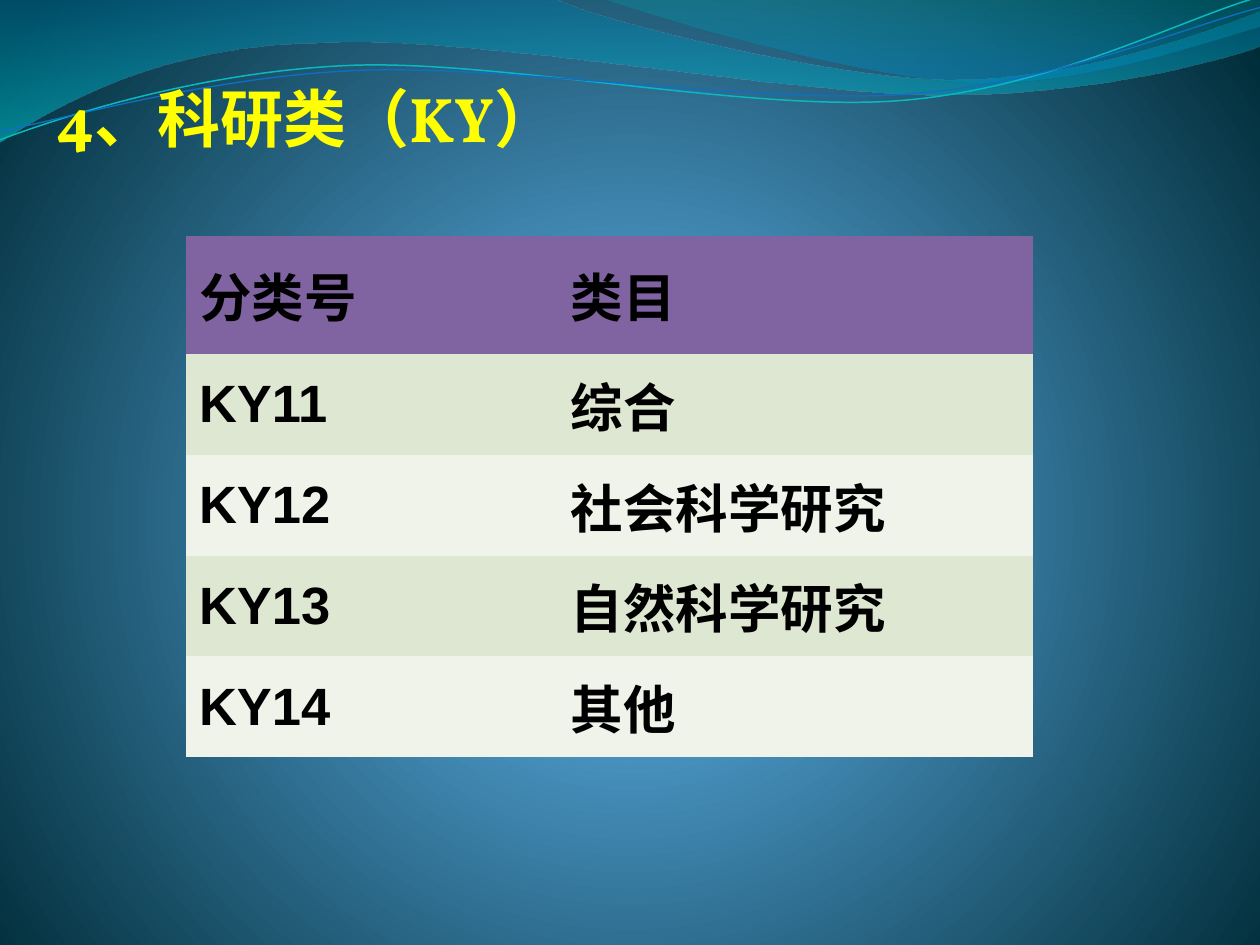
from dataclasses import dataclass
from typing import Optional

from pptx import Presentation
from pptx.dml.color import RGBColor
from pptx.enum.text import MSO_ANCHOR
from pptx.oxml import parse_xml
from pptx.oxml.ns import nsdecls, qn
from pptx.util import Inches, Pt

Stop = tuple[int, str, int]
LINEAR_DOWN = '<a:lin ang="5400000" scaled="0"/>'
RADIAL = ('<a:path path="circle"><a:fillToRect l="10000" t="110000" '
          'r="10000" b="100000"/></a:path>')


@dataclass(frozen=True)
class Wave:
    """A run of segments: two numbers make a line, six a Bezier curve."""
    start: tuple[float, float]
    segments: tuple[tuple[float, ...], ...]
    stops: tuple[Stop, ...] = ()
    line_color: Optional[str] = None
    line_width: float = 0


WAVES = (
    Wave((0, -0.01), (
        (4.4, -0.01),
        (4.76, 0.17, 6.64, 0.63, 7.58, 0.63),
        (8.53, 0.63, 9.58, 0.26, 10, 0.09),
        (10.01, 0.36),
        (9.83, 0.44, 8.7, 0.76, 7.46, 0.75),
        (6.22, 0.75, 3.82, 0.28, 2.57, 0.34),
        (1.29, 0.35, 0.46, 0.83, -0.01, 1.13),
    ), stops=((0, "0074A1", 45), (100, "00C6CF", 55))),
    Wave((4.79, -0.01), (
        (5.09, 0.11, 6.82, 0.62, 7.69, 0.65),
        (8.56, 0.69, 9.61, 0.32, 10, 0.21),
        (10, 0),
    ), stops=((0, "00A1A9", 30), (80, "008BBF", 45))),
    Wave((0, 1.11), (
        (0.48, 0.93, 1.58, 0.57, 2.77, 0.52),
        (3.95, 0.47, 5.93, 0.89, 7.13, 0.8),
        (8.33, 0.71, 9.38, 0.15, 9.98, -0.02),
    ), line_color="0AB8BF", line_width=0.85),
    Wave((0, 1.04), (
        (0.47, 0.96, 1.64, 0.61, 2.83, 0.56),
        (4.03, 0.51, 5.97, 0.83, 7.17, 0.75),
        (8.36, 0.67, 9.41, 0.21, 10, 0.06),
    ), line_color="0F6FC6", line_width=0.75),
)
BACKGROUND_STOPS = ((0, "4AA0D6", 100), (25, "4C98C7", 100), (100, "002C38", 100))
ROWS = (("分类号", "类目"), ("KY11", "综合"), ("KY12", "社会科学研究"),
        ("KY13", "自然科学研究"), ("KY14", "其他"))
COLUMN_WIDTHS = (2.95, 3.77)
HEADER_HEIGHT, ROW_HEIGHT = 0.94, 0.8
HEADER_COLOR, BAND_COLORS = "8064A2", ("EFF3EA", "DEE7D1")
NO_STYLE_ID = "{2D5ABB26-0587-4C30-8999-92F81FD0307C}"


def rgb(color: str) -> RGBColor:
    """Turn a hex string into a colour."""
    return RGBColor.from_string(color)


def set_gradient(fill, element, stops: tuple[Stop, ...], direction: str) -> None:
    """Give a fill a gradient of (position, colour, opacity) stops."""
    fill.gradient()
    gradient = next(element.iter(qn("a:gradFill")))
    stop_xml = "".join(
        f'<a:gs pos="{position * 1000}"><a:srgbClr val="{color}">'
        f'<a:alpha val="{opacity * 1000}"/></a:srgbClr></a:gs>'
        for position, color, opacity in stops)
    gradient.getparent().replace(gradient, parse_xml(
        f'<a:gradFill {nsdecls("a")} rotWithShape="1">'
        f'<a:gsLst>{stop_xml}</a:gsLst>{direction}</a:gradFill>'))


def bend_segments(shape, wave: Wave) -> None:
    """Merge each three control points of a curve into one Bezier segment."""
    lines = iter(list(shape._element.iter(qn("a:lnTo"))))
    for segment in wave.segments:
        first = next(lines)
        if len(segment) == 6:
            first.tag = qn("a:cubicBezTo")
            for other in (next(lines), next(lines)):
                first.append(other[0])
                other.getparent().remove(other)


def add_wave(slide, wave: Wave) -> None:
    """Draw a wave as a gradient area or an open line."""
    builder = slide.shapes.build_freeform(*map(Inches, wave.start))
    points = [(Inches(x), Inches(y)) for segment in wave.segments
              for x, y in zip(segment[::2], segment[1::2])]
    builder.add_line_segments(points, close=bool(wave.stops))
    shape = builder.convert_to_shape()
    bend_segments(shape, wave)
    shape.shadow.inherit = False
    if wave.stops:
        set_gradient(shape.fill, shape._element, wave.stops, LINEAR_DOWN)
        shape.line.fill.background()
    else:
        shape.fill.background()
        shape.line.color.rgb = rgb(wave.line_color)
        shape.line.width = Pt(wave.line_width)


def write_text(paragraph, text: str, font_name: str, size: int, color: str) -> None:
    """Write bold text into a paragraph."""
    paragraph.text = text
    font = paragraph.font
    font.name, font.size, font.bold = font_name, Pt(size), True
    font.color.rgb = rgb(color)


def add_title(slide) -> None:
    """Add the yellow heading."""
    title = slide.shapes.add_textbox(Inches(0.35), Inches(0.37), Inches(9.29), Inches(5.9))
    title.text_frame.word_wrap = True
    title.text_frame.margin_top = Inches(0.38)
    paragraph = title.text_frame.paragraphs[0]
    paragraph.line_spacing = 0.8
    write_text(paragraph, "4、科研类（KY）", "Vollkorn", 36, "FFFF00")


def add_category_table(slide) -> None:
    """Add the banded table of category numbers."""
    height = HEADER_HEIGHT + ROW_HEIGHT * (len(ROWS) - 1)
    frame = slide.shapes.add_table(len(ROWS), len(COLUMN_WIDTHS), Inches(1.48), Inches(1.87),
                                   Inches(sum(COLUMN_WIDTHS)), Inches(height))
    table = frame.table
    next(frame._element.iter(qn("a:tableStyleId"))).text = NO_STYLE_ID
    for column, width in zip(table.columns, COLUMN_WIDTHS):
        column.width = Inches(width)
    for index, texts in enumerate(ROWS):
        table.rows[index].height = Inches(ROW_HEIGHT if index else HEADER_HEIGHT)
        for cell, text in zip(table.rows[index].cells, texts):
            cell.fill.solid()
            cell.fill.fore_color.rgb = rgb(BAND_COLORS[index % 2] if index else HEADER_COLOR)
            cell.vertical_anchor = MSO_ANCHOR.MIDDLE
            paragraph = cell.text_frame.paragraphs[0]
            paragraph.space_before = Pt(6)
            write_text(paragraph, text, "Arial", 30, "000000")


def main() -> None:
    """Build and save the slide."""
    presentation = Presentation()
    presentation.slide_width, presentation.slide_height = Inches(10), Inches(7.5)
    slide = presentation.slides.add_slide(presentation.slide_layouts[6])
    set_gradient(slide.background.fill, slide._element, BACKGROUND_STOPS, RADIAL)
    for wave in WAVES:
        add_wave(slide, wave)
    add_title(slide)
    add_category_table(slide)
    presentation.save("out.pptx")


if __name__ == "__main__":
    main()
